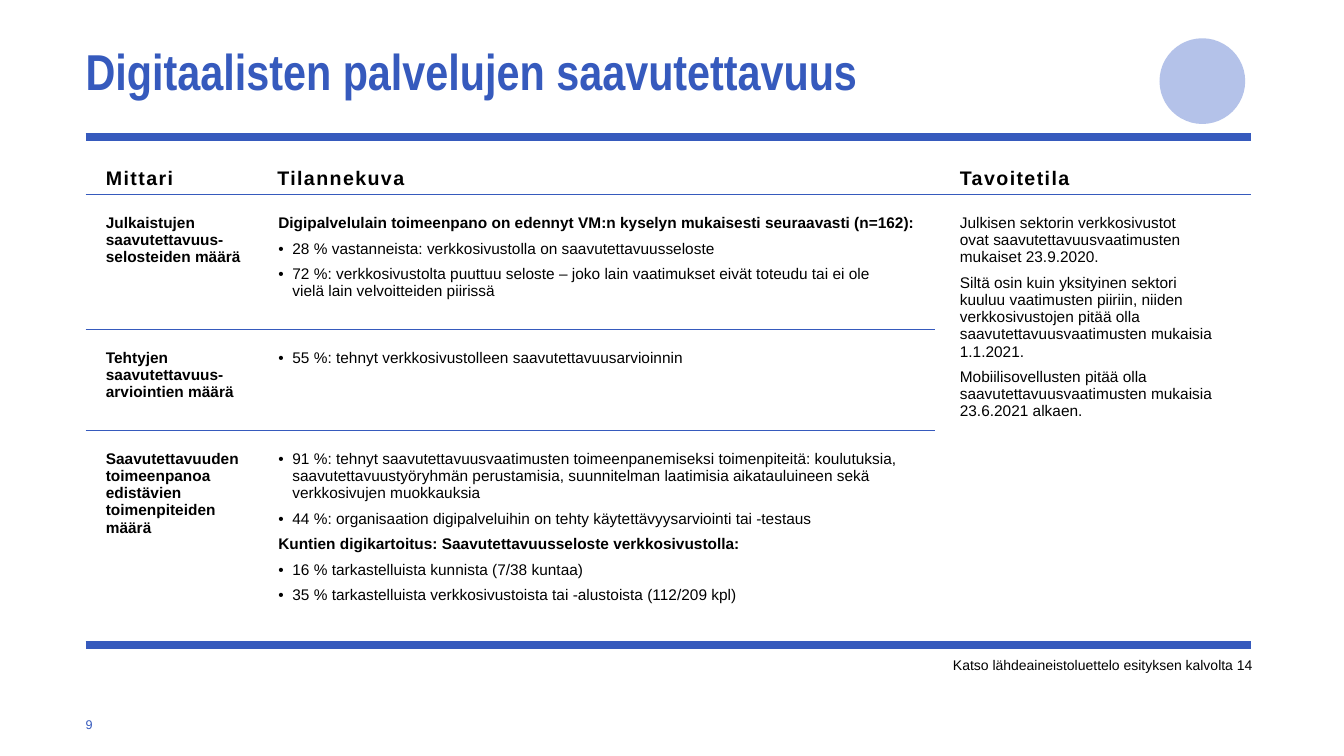
from copy import deepcopy
from lxml.etree import SubElement
from pptx import Presentation
from pptx.dml.color import RGBColor
from pptx.enum.shapes import MSO_SHAPE
from pptx.enum.text import MSO_ANCHOR, MSO_AUTO_SIZE, PP_ALIGN
from pptx.oxml.ns import qn
from pptx.util import Inches, Pt

HUES = {"blue": "365ABD", "pale": "ACBCE7", "ink": "000000"}
TITLE = "Digitaalisten palvelujen saavutettavuus"
SOURCE = "Katso lähdeaineistoluettelo esityksen kalvolta 14"
NUMBER = "9"
HEADS = ["Mittari", "Tilannekuva", "Tavoitetila"]
METERS = [
    "Julkaistujen saavutettavuus-\nselosteiden määrä",
    "Tehtyjen saavutettavuus-arviointien määrä",
    "Saavutettavuuden toimeenpanoa edistävien toimenpiteiden määrä",
]
STATUS = [
    [
        ("lead", "Digipalvelulain toimeenpano on edennyt VM:n kyselyn mukaisesti seuraavasti (n=162):"),
        ("item", "28 % vastanneista: verkkosivustolla on saavutettavuusseloste"),
        ("item", "72 %: verkkosivustolta puuttuu seloste – joko lain vaatimukset eivät toteudu tai ei ole \nvielä lain velvoitteiden piirissä"),
    ],
    [
        ("item", "55 %: tehnyt verkkosivustolleen saavutettavuusarvioinnin"),
    ],
    [
        ("item", "91 %: tehnyt saavutettavuusvaatimusten toimeenpanemiseksi toimenpiteitä: koulutuksia, saavutettavuustyöryhmän perustamisia, suunnitelman laatimisia aikatauluineen sekä \nverkkosivujen muokkauksia"),
        ("item", "44 %: organisaation digipalveluihin on tehty käytettävyysarviointi tai -testaus"),
        ("lead", "Kuntien digikartoitus: Saavutettavuusseloste verkkosivustolla:"),
        ("item", "16 % tarkastelluista kunnista (7/38 kuntaa)"),
        ("item", "35 % tarkastelluista verkkosivustoista tai -alustoista (112/209 kpl)"),
    ],
]
GOALS = [
    ("goal", "Julkisen sektorin verkkosivustot \novat saavutettavuusvaatimusten \nmukaiset 23.9.2020."),
    ("goal", "Siltä osin kuin yksityinen sektori \nkuuluu vaatimusten piiriin, niiden verkkosivustojen pitää olla saavutettavuusvaatimusten mukaisia 1.1.2021."),
    ("goal", "Mobiilisovellusten pitää olla saavutettavuusvaatimusten mukaisia 23.6.2021 alkaen."),
]
STYLES = {
    "title": {"name": "Arial Narrow", "size": Pt(36), "bold": True, "hue": "blue"},
    "head": {"size": Pt(14), "bold": True, "track": 100, "left": 0.05},
    "meter": {"bold": True},
    "lead": {"bold": True, "left": 0.06, "after": 6},
    "item": {"left": 0.2, "hang": -0.14, "after": 6, "dot": "•"},
    "goal": {"left": 0.05, "after": 6},
    "source": {"size": Pt(10)},
    "number": {"size": Pt(9), "hue": "blue"},
}
BASE = {"name": "Arial", "size": Pt(11), "bold": False, "hue": "ink"}
LEFT, TOP, WIDTH = 0.85, 1.36, 11.56
COLS = [1.65, 6.77, 3.14]
ROWS = [0.57, 1.34, 1.0, 2.13]
THICK, THIN = 6, 1
PLAIN = "{2D5ABB26-0587-4C30-8999-92F81FD0307C}"


def write(frame, lines):
    for i, (kind, words) in enumerate(lines):
        para = frame.paragraphs[0] if i == 0 else frame.add_paragraph()
        style = {**BASE, **STYLES[kind]}
        para.text = words
        para.space_after = Pt(style.get("after", 0))
        props = para._p.get_or_add_pPr()
        props.set("marL", str(Inches(style.get("left", 0))))
        props.set("indent", str(Inches(style.get("hang", 0))))
        if "dot" in style:
            tint = SubElement(props, qn("a:buClr"))
            SubElement(tint, qn("a:srgbClr"), val=HUES["ink"])
            SubElement(props, qn("a:buFont"), typeface="Arial")
            SubElement(props, qn("a:buChar"), char=style["dot"])
        for run in para.runs:
            for key in ("name", "size", "bold"):
                setattr(run.font, key, style[key])
            run.font.color.rgb = RGBColor.from_string(HUES[style["hue"]])
            if "track" in style:
                run.font._element.set("spc", str(style["track"]))
        for gap in para._p.findall(qn("a:br")):
            gap.append(deepcopy(para.runs[0].font._element))


def pad(box, sides):
    names = ("margin_left", "margin_top", "margin_right", "margin_bottom")
    for name, size in zip(names, sides):
        setattr(box, name, Inches(size))


def rule(cell, sides):
    props = cell._tc.get_or_add_tcPr()
    for tag, width in sides.items():
        line = SubElement(props, qn("a:" + tag), w=str(Pt(width)))
        fill = SubElement(line, qn("a:solidFill"))
        SubElement(fill, qn("a:srgbClr"), val=HUES["blue"])


def label(slide, kind, words, place, sides):
    frame = slide.shapes.add_textbox(*map(Inches, place)).text_frame
    frame.word_wrap = True
    pad(frame, sides)
    write(frame, [(kind, words)])
    return frame


def grid(slide):
    place = map(Inches, (LEFT, TOP, WIDTH, sum(ROWS)))
    shape = slide.shapes.add_table(len(ROWS), len(COLS), *place)
    table = shape.table
    table.first_row = table.horz_banding = False
    table._tbl.tblPr.find(qn("a:tableStyleId")).text = PLAIN
    for col, width in zip(table.columns, COLS):
        col.width = Inches(width)
    for row, height in zip(table.rows, ROWS):
        row.height = Inches(height)
    last = len(ROWS) - 1
    table.cell(1, 2).merge(table.cell(last, 2))
    cells = [[[("head", head)] for head in HEADS]]
    cells += [[[("meter", meter)], lines] for meter, lines in zip(METERS, STATUS)]
    cells[0][0] = [("meter", HEADS[0])]
    cells[0][0] = [("head", HEADS[0])]
    cells[1].append(GOALS)
    for r in range(len(ROWS)):
        for c in range(len(COLS)):
            cell = table.cell(r, c)
            tall = r > 0 and c == 2
            sides = {}
            if not tall or r == 1:
                sides["lnT"] = THIN if r else THICK
            if not tall or r in (1, last):
                sides["lnB"] = THICK if tall or r == last else THIN
            rule(cell, sides)
            cell.fill.background()
            if c < len(cells[r]):
                pad(cell, (0.2, 0.2 if r else 0.05, 0.1, 0.05))
                cell.vertical_anchor = MSO_ANCHOR.TOP if r else MSO_ANCHOR.BOTTOM
                write(cell.text_frame, cells[r][c])
    table.cell(0, 0).text_frame.paragraphs[0]._p.pPr.set("marL", "0")


def main():
    deck = Presentation()
    deck.slide_width, deck.slide_height = Inches(13.33), Inches(7.5)
    slide = deck.slides.add_slide(deck.slide_layouts[5])
    title = slide.shapes.title
    title.left, title.top = Inches(LEFT), Inches(0.29)
    title.width, title.height = Inches(WIDTH), Inches(1.45)
    frame = title.text_frame
    frame.auto_size = MSO_AUTO_SIZE.NONE
    frame.vertical_anchor = MSO_ANCHOR.TOP
    pad(frame, (0, 0.15, 0, 0))
    write(frame, [("title", TITLE)])
    frame.paragraphs[0].alignment = PP_ALIGN.LEFT
    frame.paragraphs[0].line_spacing = 0.95

    grid(slide)
    disc = slide.shapes.add_shape(MSO_SHAPE.OVAL, *map(Inches, (11.5, 0.38, 0.85, 0.85)))
    disc.shadow.inherit = False
    disc.fill.solid()
    disc.fill.fore_color.rgb = RGBColor.from_string(HUES["pale"])
    tint = disc._element.spPr.find(qn("a:solidFill"))[0]
    SubElement(tint, qn("a:alpha"), val="90000")
    disc.line.fill.background()

    note = label(slide, "source", SOURCE, (9.29, 6.46, 3.13, 0.44), (0, 0.05, 0, 0.05))
    note.paragraphs[0].alignment = PP_ALIGN.RIGHT
    page = label(slide, "number", NUMBER, (LEFT, 7.06, 0.4, 0.25), (0, 0, 0, 0))
    page.vertical_anchor = MSO_ANCHOR.MIDDLE
    deck.save("out.pptx")


if __name__ == "__main__":
    main()
